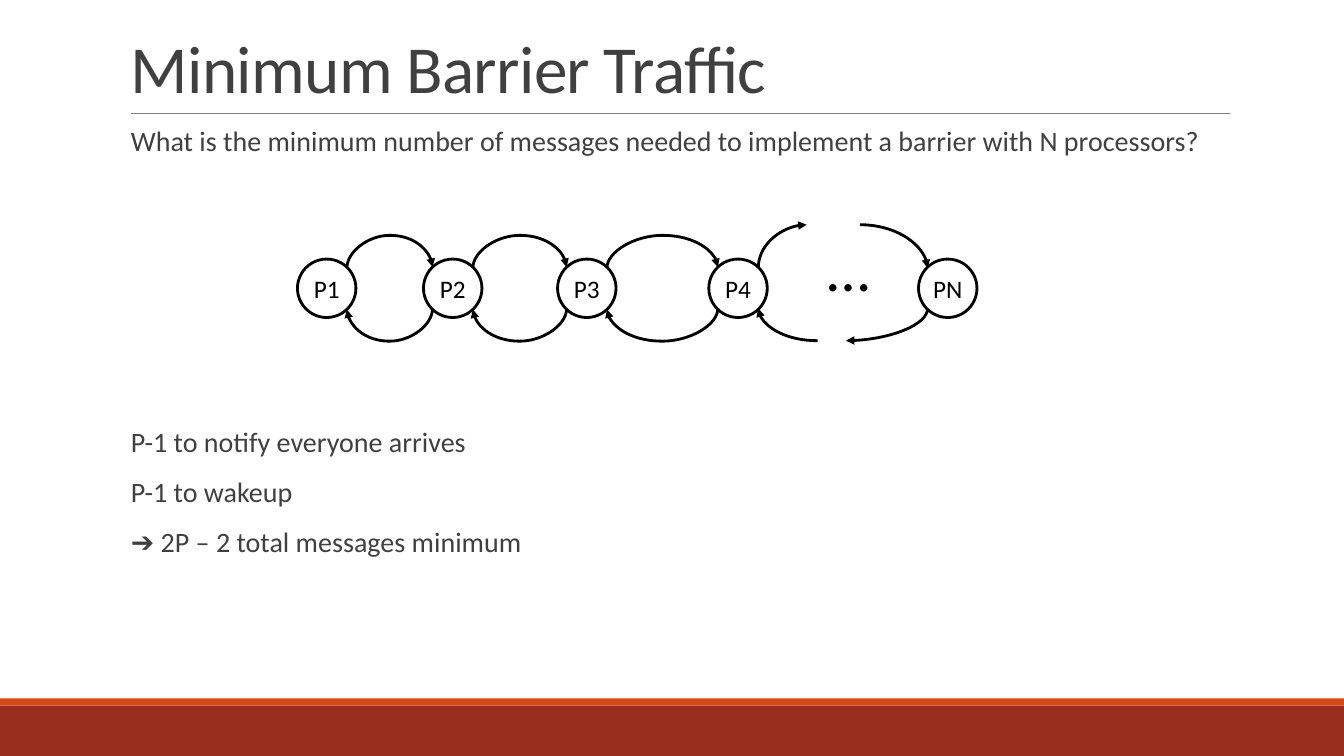
import dataclasses

import lxml.etree
import pptx
import pptx.dml.color
import pptx.enum.shapes
import pptx.enum.text
import pptx.oxml.ns
import pptx.util

PX = 9144  # EMU; 100 px to the inch
WIDTH, HEIGHT = 1333, 750
SHAPE = pptx.enum.shapes.MSO_SHAPE
ANCHOR = pptx.enum.text.MSO_ANCHOR
ALIGN = pptx.enum.text.PP_ALIGN
qn = pptx.oxml.ns.qn

DIAMETER = 58
DIAG = 9  # inset of a circle's diagonal connection sites
ARCH_RISE = 33
SITE = {"top left": 1, "bottom left": 3, "bottom right": 5, "top right": 7}


@dataclasses.dataclass(frozen=True)
class Theme:
    font: str = "Calibri"
    text: str = "404040"
    ink: str = "000000"
    paper: str = "FFFFFF"
    rule: str = "808080"
    band: str = "9B2D1F"
    stripe: str = "D34817"
    title_pt: int = 48
    body_pt: int = 20
    node_pt: int = 18
    dots_pt: int = 44
    rule_pt: float = 0.5
    line_pt: int = 2


THEME = Theme()


def emu(*lengths):
    return [round(v * PX) for v in lengths]


def rgb(color):
    return pptx.dml.color.RGBColor.from_string(color)


def add_run(p, text, size, color):
    r = p.add_run()
    r.text = text
    r.font.name = THEME.font
    r.font.size = pptx.util.Pt(size)
    r.font.color.rgb = rgb(color)
    return r


def add_text_box(slide, box, insets=(10, 5), wrap=True):
    tf = slide.shapes.add_textbox(*emu(*box)).text_frame
    tf.word_wrap = wrap
    tf.margin_left = tf.margin_right = emu(insets[0])[0]
    tf.margin_top = tf.margin_bottom = emu(insets[1])[0]
    return tf


def add_filled(slide, kind, box, color):
    sp = slide.shapes.add_shape(kind, *emu(*box))
    sp.shadow.inherit = False
    sp.fill.solid()
    sp.fill.fore_color.rgb = rgb(color)
    sp.line.fill.background()
    return sp


def add_line(slide, kind, ends, color, width):
    cxn = slide.shapes.add_connector(kind, *emu(*ends))
    cxn.line.color.rgb = rgb(color)
    cxn.line.width = pptx.util.Pt(width)
    lxml.etree.SubElement(cxn._element.spPr, qn("a:effectLst"))
    return cxn


def add_footer(slide, left, top, width, height):
    stripe = 7
    add_filled(slide, SHAPE.RECTANGLE,
               (left, top + stripe, width, height - stripe), THEME.band)
    add_filled(slide, SHAPE.RECTANGLE, (left, top, width, stripe), THEME.stripe)


def add_title(slide, left, top, width, height):
    rule_y = top + height + 1
    add_line(slide, pptx.enum.shapes.MSO_CONNECTOR.STRAIGHT,
             (left + 10, rule_y, left + width, rule_y), THEME.rule, THEME.rule_pt)
    tf = add_text_box(slide, (left, top, width, height))
    tf.vertical_anchor = ANCHOR.BOTTOM
    p = tf.paragraphs[0]
    p.line_spacing = 0.85
    r = add_run(p, "Minimum Barrier Traffic", THEME.title_pt, THEME.text)
    r.font._element.set("spc", "-50")


def add_body(slide, left, top, width, height):
    """Question on top, answers below the room left for the diagram."""
    lines = (
        ("What is the minimum number of messages needed to implement "
         "a barrier with N processors?", 0),
        ("P-1 to notify everyone arrives", 192),
        ("P-1 to wakeup", 12),
        ("➔ 2P – 2 total messages minimum", 12),
    )
    tf = add_text_box(slide, (left, top, width, height), (10, 5))
    tf.margin_right = 0
    for i, (text, before) in enumerate(lines):
        p = tf.add_paragraph() if i else tf.paragraphs[0]
        p.line_spacing = 0.9
        p.space_before = pptx.util.Pt(before)
        p.space_after = pptx.util.Pt(2)
        add_run(p, text, THEME.body_pt, THEME.text)


def add_processor(slide, left, top, name):
    sp = add_filled(slide, SHAPE.OVAL, (left, top, DIAMETER, DIAMETER), THEME.paper)
    sp.line.color.rgb = rgb(THEME.ink)
    sp.line.width = pptx.util.Pt(THEME.line_pt)
    tf = sp.text_frame
    tf.word_wrap = False
    tf.vertical_anchor = ANCHOR.MIDDLE
    p = tf.paragraphs[0]
    p.alignment = ALIGN.CENTER
    add_run(p, name, THEME.node_pt, THEME.ink)
    return sp


def add_curve(slide, start, end, rotation=0, flip=False, rise=None, glue=()):
    """Curved arrow; rise makes an arch, otherwise it is a quarter turn.

    glue lists (tag, shape, site name) for the ends held by a circle.
    """
    (x0, y0), (x1, y1) = start, end
    w, h = abs(x1 - x0), abs(y1 - y0)
    if rotation == 90:
        w, h = h, w
    left, top = (x0 + x1 - w) / 2, (y0 + y1 - h) / 2
    cxn = add_line(slide, pptx.enum.shapes.MSO_CONNECTOR.CURVE,
                   (left, top, left + w, top + h), THEME.ink, THEME.line_pt)
    sppr = cxn._element.spPr
    xfrm = sppr.find(qn("a:xfrm"))
    xfrm.set("rot", str(rotation * 60000))
    if flip:
        xfrm.set("flipH", "1")
        xfrm.set("flipV", "1")
    geom = sppr.find(qn("a:prstGeom"))
    if rise is None:
        geom.set("prst", "curvedConnector2")
    else:
        lxml.etree.SubElement(geom.find(qn("a:avLst")), qn("a:gd"), name="adj1",
                              fmla=f"val {round(rise / w * 100000)}")
    lxml.etree.SubElement(sppr.find(qn("a:ln")), qn("a:tailEnd"), type="triangle")
    props = cxn._element.find(".//" + qn("p:cNvCxnSpPr"))
    for tag, sp, site in glue:
        lxml.etree.SubElement(props, qn(tag), id=str(sp.shape_id), idx=str(SITE[site]))


def add_message_chain(slide, left, top):
    """Row of processors with messages going right above and left below."""
    offsets = {"P1": 0, "P2": 125, "P3": 258, "P4": 408, "PN": 616}
    xs = [left + dx for dx in offsets.values()]
    nodes = [add_processor(slide, x, top, name) for x, name in zip(xs, offsets)]
    tf = add_text_box(slide, (left + 516, top - 34, 63, 84), wrap=False)
    add_run(tf.paragraphs[0], "…", THEME.dots_pt, THEME.ink)

    high, low = top + DIAG, top + DIAMETER - DIAG
    far = DIAMETER - DIAG
    for i in range(3):
        a, b = nodes[i:i + 2]
        xa, xb = xs[i] + far, xs[i + 1] + DIAG
        add_curve(slide, (xa, high), (xb, high - 1), 90, True, ARCH_RISE,
                  [("a:stCxn", a, "top right"), ("a:endCxn", b, "top left")])
        add_curve(slide, (xb, low), (xa, low + 1), 90, False, ARCH_RISE,
                  [("a:stCxn", b, "bottom left"), ("a:endCxn", a, "bottom right")])

    p4, pn = nodes[3:]
    x4, xn = xs[3] + far, xs[4] + DIAG
    above, below = top - 34, top + 81
    add_curve(slide, (x4, high), (left + 505, above), 90, True,
              glue=[("a:stCxn", p4, "top right")])
    add_curve(slide, (left + 558, above), (xn, high),
              glue=[("a:endCxn", pn, "top left")])
    add_curve(slide, (xn, low), (left + 544, below), 90,
              glue=[("a:stCxn", pn, "bottom left")])
    add_curve(slide, (left + 516, below), (x4, low), 180,
              glue=[("a:endCxn", p4, "bottom right")])


def main():
    prs = pptx.Presentation()
    prs.slide_width, prs.slide_height = emu(WIDTH, HEIGHT)
    slide = prs.slides.add_slide(prs.slide_layouts[6])
    add_footer(slide, 0, 693, WIDTH, HEIGHT - 693)
    add_title(slide, 120, 31, 1100, 80)
    add_body(slide, 120, 121, 1100, 521)
    add_message_chain(slide, 295, 257)
    prs.save("out.pptx")


if __name__ == "__main__":
    main()
